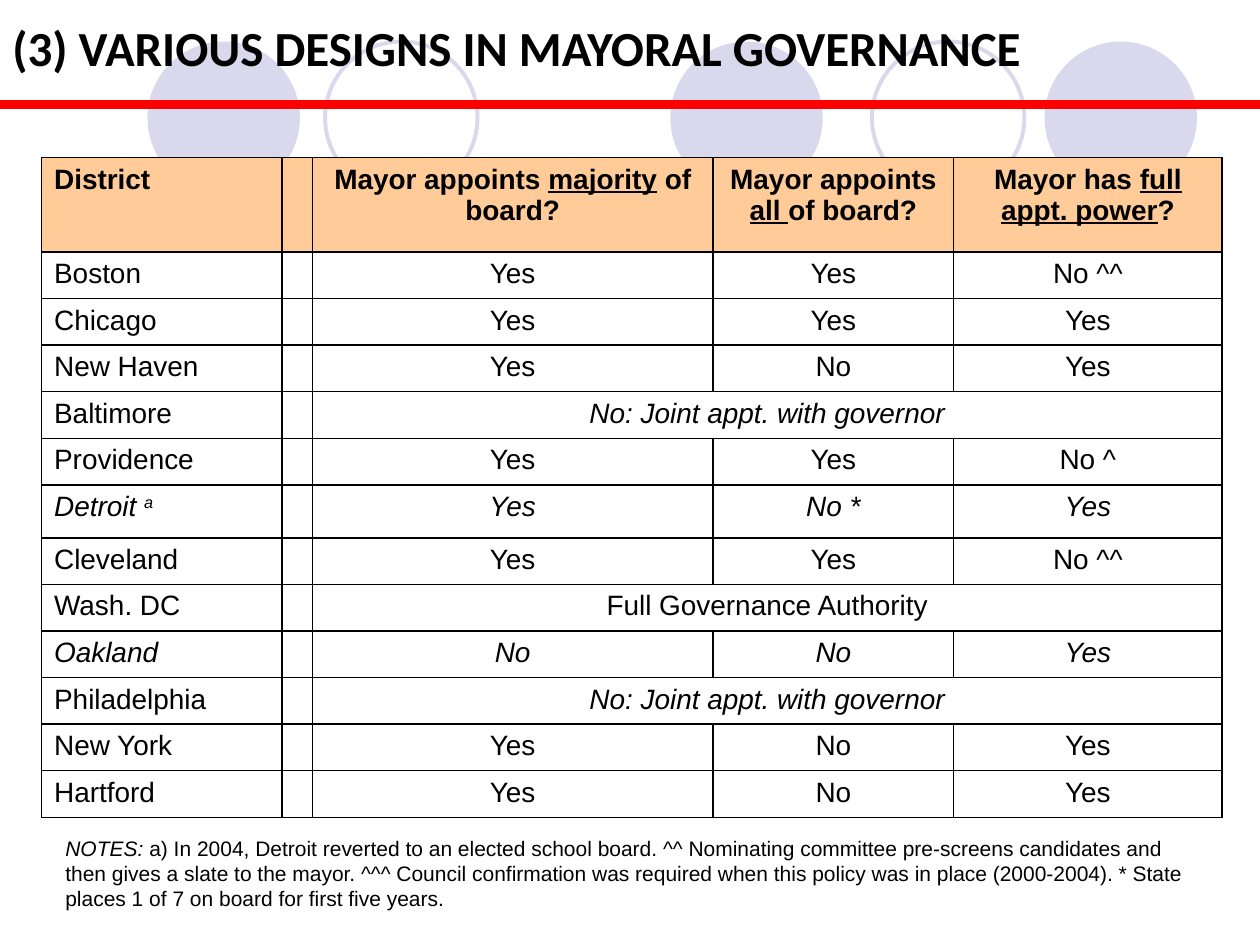
from lxml.etree import SubElement
from pptx import Presentation
from pptx.dml.color import RGBColor
from pptx.enum.shapes import MSO_CONNECTOR as Connector, MSO_SHAPE as Shape
from pptx.enum.text import MSO_ANCHOR as Anchor, PP_ALIGN as Align
from pptx.oxml.ns import qn
from pptx.util import Inches, Pt

BLACK = RGBColor(0x00, 0x00, 0x00)
RED = RGBColor(0xFF, 0x00, 0x00)
LAVENDER = RGBColor(0xD9, 0xD8, 0xEC)
PEACH = RGBColor(0xFF, 0xCC, 0x99)

CIRCLE_SIZE = 1.21
CIRCLES = [(5.32, True), (8.29, True), (1.17, True), (6.92, False), (2.58, False)]

COLUMNS = [1.91, 0.23, 3.18, 1.91, 2.13]
HEADER_HEIGHT, ROW_HEIGHT, DETROIT_HEIGHT = 0.75, 0.37, 0.42

# A span is (text, marks): b bold, i italic, u underlined, s superscript.
HEADER = [
    [("District", "b")],
    [("Mayor appoints ", "b"), ("majority", "bu"), (" of board?", "b")],
    [("Mayor appoints ", "b"), ("all ", "bu"), ("of board?", "b")],
    [("Mayor has ", "b"), ("full appt. power", "bu"), ("?", "b")],
]
JOINT = "No: Joint appt. with governor"
DISTRICTS = [
    ("Boston", "Yes", "Yes", "No ^^"),
    ("Chicago", "Yes", "Yes", "Yes"),
    ("New Haven", "Yes", "No", "Yes"),
    ("Baltimore", JOINT),
    ("Providence", "Yes", "Yes", "No ^"),
    ("Detroit ", "Yes", "No *", "Yes"),
    ("Cleveland", "Yes", "Yes", "No ^^"),
    ("Wash. DC", "Full Governance Authority"),
    ("Oakland", "No", "No", "Yes"),
    ("Philadelphia", JOINT),
    ("New York", "Yes", "No", "Yes"),
    ("Hartford", "Yes", "No", "Yes"),
]
ITALIC_DISTRICTS = ("Detroit ", "Oakland")
NOTES = [
    ("NOTES:", "i"),
    (" a) In 2004, Detroit reverted to an elected school board. ^^ Nominating "
     "committee pre-screens candidates and then gives a slate to the mayor. "
     "^^^ Council confirmation was required when this policy was in place "
     "(2000-2004). * State places 1 of 7 on board for first five years.", ""),
]


def district_row(district, *answers):
    """Return the row's cells, each a list of spans."""
    marks = "i" if district in ITALIC_DISTRICTS else ""
    cells = [[(district, marks)]]
    cells += [[(answer, "i" if answer == JOINT else marks)] for answer in answers]
    if district == "Detroit ":
        cells[0].append(("a", "is"))
    return cells


class SlideBuilder:
    body_font = "Arial"

    def __init__(self, page):
        self.page = page

    def add_spans(self, frame, spans, size, font=body_font, align=Align.LEFT):
        para = frame.paragraphs[0]
        para.alignment = align
        for text, marks in spans:
            span = para.add_run()
            span.text = text
            span.font.name, span.font.size = font, Pt(size)
            span.font.color.rgb = BLACK
            span.font.bold = "b" in marks
            span.font.italic = "i" in marks
            span.font.underline = "u" in marks
            if "s" in marks:
                span.font._element.set("baseline", "30000")

    def circle(self, left, filled):
        disc = self.page.shapes.add_shape(
            Shape.OVAL, Inches(left), Inches(0.33), Inches(CIRCLE_SIZE), Inches(CIRCLE_SIZE))
        disc.shadow.inherit = False
        if filled:
            disc.fill.solid()
            disc.fill.fore_color.rgb = LAVENDER
            disc.line.fill.background()
        else:
            disc.fill.background()
            disc.line.color.rgb = LAVENDER
            disc.line.width = Pt(2.25)

    def text(self, left, top, width, height, spans, size, font=body_font, anchor=Anchor.TOP):
        box = self.page.shapes.add_textbox(
            Inches(left), Inches(top), Inches(width), Inches(height))
        frame = box.text_frame
        frame.word_wrap = True
        frame.vertical_anchor = anchor
        self.add_spans(frame, spans, size, font)

    def rule(self, top, color, width):
        line = self.page.shapes.add_connector(
            Connector.STRAIGHT, 0, Inches(top), Inches(10), Inches(top))
        line.line.color.rgb = color
        line.line.width = Pt(width)
        SubElement(line._element.spPr, qn("a:effectLst"))

    def style_cell(self, cell, fill):
        """Draw the four borders, then the fill, in the order the schema asks for."""
        properties = cell._tc.get_or_add_tcPr()
        for side in ("lnL", "lnR", "lnT", "lnB"):
            border = SubElement(properties, qn(f"a:{side}"), w=str(Pt(1)))
            solid = SubElement(border, qn("a:solidFill"))
            SubElement(solid, qn("a:srgbClr"), val=str(BLACK))
        if fill is None:
            cell.fill.background()
        else:
            cell.fill.solid()
            cell.fill.fore_color.rgb = fill

    def table(self, left, top, columns, heights, rows):
        """Each row holds a name and its answers; a lone answer spans the answer columns."""
        grid = self.page.shapes.add_table(
            len(rows), len(columns), Inches(left), Inches(top),
            Inches(sum(columns)), Inches(sum(heights))).table
        grid.first_row = grid.horz_banding = False
        for column, width in zip(grid.columns, columns):
            column.width = Inches(width)
        last = len(columns) - 1
        for index, (height, (name, *answers)) in enumerate(zip(heights, rows)):
            grid.rows[index].height = Inches(height)
            for column in range(len(columns)):
                self.style_cell(grid.cell(index, column), PEACH if index == 0 else None)
            gutter = grid.cell(index, 1)
            gutter.margin_top = gutter.margin_bottom = 0
            if len(answers) == 1:
                grid.cell(index, 2).merge(grid.cell(index, last))
            self.add_spans(grid.cell(index, 0).text_frame, name, 16)
            for column, answer in enumerate(answers, start=2):
                self.add_spans(grid.cell(index, column).text_frame, answer, 16,
                               align=Align.CENTER)


def main():
    deck = Presentation()
    deck.slide_width, deck.slide_height = Inches(10), Inches(7.5)
    builder = SlideBuilder(deck.slides.add_slide(deck.slide_layouts[6]))

    for left, filled in CIRCLES:
        builder.circle(left, filled)
    builder.text(0, 0, 10, 0.75, [("(3) VARIOUS DESIGNS IN MAYORAL GOVERNANCE", "b")],
                 28, "Calibri", Anchor.MIDDLE)
    heights = [HEADER_HEIGHT] + [
        DETROIT_HEIGHT if row[0] == "Detroit " else ROW_HEIGHT for row in DISTRICTS]
    rows = [HEADER] + [district_row(*row) for row in DISTRICTS]
    builder.table(0.33, 1.25, COLUMNS, heights, rows)
    builder.text(0.42, 6.58, 9.25, 0.7, NOTES, 12)
    builder.rule(0.83, RED, 5)
    deck.save("out.pptx")


if __name__ == "__main__":
    main()
